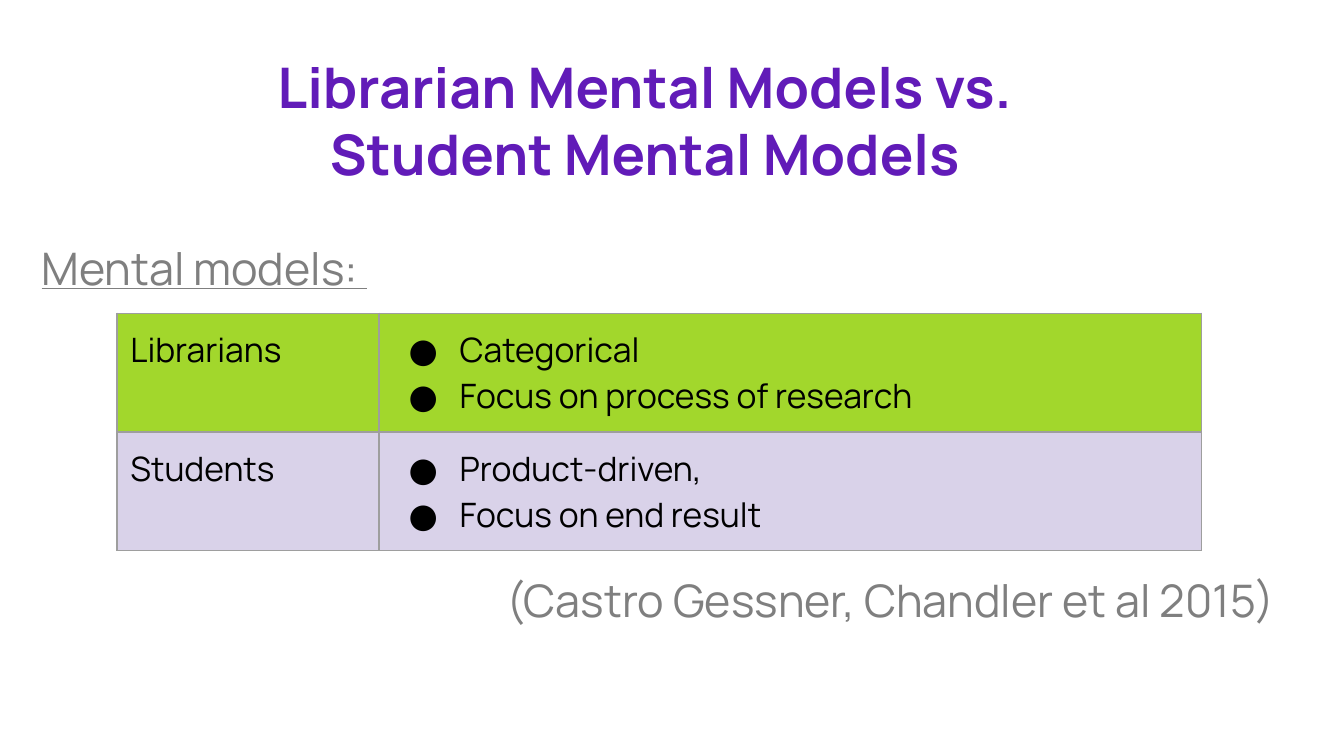
import pptx
import pptx.dml.color
import pptx.enum.text
import pptx.oxml
import pptx.oxml.ns
import pptx.util
from pptx.util import Inches

COLORS = {"title": "611BB8", "muted": "7F7F7F", "ink": "000000",
          "green": "A2D72C", "lilac": "D9D2E9", "border": "9E9E9E"}
FONT = "Manrope"
TITLE = ["Librarian Mental Models vs. ", "Student Mental Models "]
HEADING = ["Mental models: "]
CITATION = ["(Castro Gessner, Chandler et al 2015)"]
MODELS = [
    ("Librarians", ["Categorical", "Focus on process of research"], "green"),
    ("Students", ["Product-driven,", "Focus on end result"], "lilac"),
]
COLUMN_WIDTHS = [1.95, 6.12]
ROW_HEIGHT = 0.83
PAGE_WIDTH = Inches(10)
PAGE_HEIGHT = PAGE_WIDTH * 9 // 16

ALIGN = pptx.enum.text.PP_ALIGN
ANCHOR = pptx.enum.text.MSO_ANCHOR
MARGINS = {f"margin_{side}": Inches(0.1) for side in ("left", "right", "top", "bottom")}
FRAME = {**MARGINS, "word_wrap": True, "vertical_anchor": ANCHOR.TOP,
         "auto_size": pptx.enum.text.MSO_AUTO_SIZE.NONE}
PLAIN = {"alignment": ALIGN.LEFT, "space_before": pptx.util.Pt(0)}
SPACED = {**PLAIN, "line_spacing": 1.15}


def apply(target, values):
    for name, value in values.items():
        setattr(target, name, value)


def add_xml(parent, tag, content="", **attributes):
    listed = " ".join(f'{name}="{value}"' for name, value in attributes.items())
    namespace = pptx.oxml.ns.nsdecls("a")
    parent.append(pptx.oxml.parse_xml(f"<a:{tag} {namespace} {listed}>{content}</a:{tag}>"))


def solid(color):
    return f'<a:solidFill><a:srgbClr val="{COLORS[color]}"/></a:solidFill>'


def write(frame, lines, size, color, para_format, **font_format):
    for index, line in enumerate(lines):
        para = frame.paragraphs[0] if index == 0 else frame.add_paragraph()
        apply(para, para_format)
        span = para.add_run()
        span.text = line
        apply(span.font, {"name": FONT, "size": pptx.util.Pt(size), **font_format})
        span.font.color.rgb = pptx.dml.color.RGBColor.from_string(COLORS[color])


def place(box, left, top, width, height):
    apply(box, dict(zip(("left", "top", "width", "height"),
                        map(Inches, (left, top, width, height)))))
    apply(box.text_frame, FRAME)
    return box.text_frame


def add_bullets(frame):
    for para in frame.paragraphs:
        properties = para._p.get_or_add_pPr()
        properties.set("marL", str(Inches(0.5)))
        properties.set("indent", str(Inches(-0.38)))
        add_xml(properties, "buClr", f'<a:srgbClr val="{COLORS["ink"]}"/>')
        add_xml(properties, "buFont", typeface=FONT)
        add_xml(properties, "buChar", char="●")


def format_cell(cell, color):
    apply(cell, {**MARGINS, "vertical_anchor": ANCHOR.TOP})
    properties = cell._tc.get_or_add_tcPr()
    for side in ("lnL", "lnR", "lnT", "lnB"):
        add_xml(properties, side, solid("border"), w=pptx.util.Pt(0.75))
    cell.fill.solid()
    cell.fill.fore_color.rgb = pptx.dml.color.RGBColor.from_string(COLORS[color])


def add_models(page):
    table = page.shapes.add_table(
        len(MODELS), len(COLUMN_WIDTHS), Inches(0.87), Inches(2.33),
        Inches(sum(COLUMN_WIDTHS)), Inches(ROW_HEIGHT * len(MODELS))).table
    apply(table, {"first_row": False, "horz_banding": False})
    for column, width in zip(table.columns, COLUMN_WIDTHS):
        column.width = Inches(width)
    for row, (group, traits, color) in zip(table.rows, MODELS):
        row.height = Inches(ROW_HEIGHT)
        for cell, lines in zip(row.cells, ([group], traits)):
            format_cell(cell, color)
            write(cell.text_frame, lines, 18, "ink", PLAIN)
        add_bullets(row.cells[1].text_frame)


def main():
    deck = pptx.Presentation()
    apply(deck, {"slide_width": PAGE_WIDTH, "slide_height": PAGE_HEIGHT})
    page = deck.slides.add_slide(deck.slide_layouts[1])

    title = place(page.shapes.title, 0.18, 0.29, 9.32, 0.68)
    write(title, TITLE, 30, "title", {**PLAIN, "alignment": ALIGN.CENTER}, bold=True)

    body = place(page.placeholders[1], 0.21, 1.63, 9.4, 3.01)
    write(body, HEADING, 24, "muted", SPACED, underline=True)
    properties = body.paragraphs[0]._p.get_or_add_pPr()
    properties.set("marL", "0")
    properties.set("indent", "0")
    add_xml(properties, "buNone")

    add_models(page)

    citation = place(page.shapes.add_textbox(0, 0, 0, 0), 3.67, 4.1, 6.79, 0.45)
    write(citation, CITATION, 24, "muted", {**SPACED, "space_after": pptx.util.Pt(10)})
    deck.save("out.pptx")


if __name__ == "__main__":
    main()
